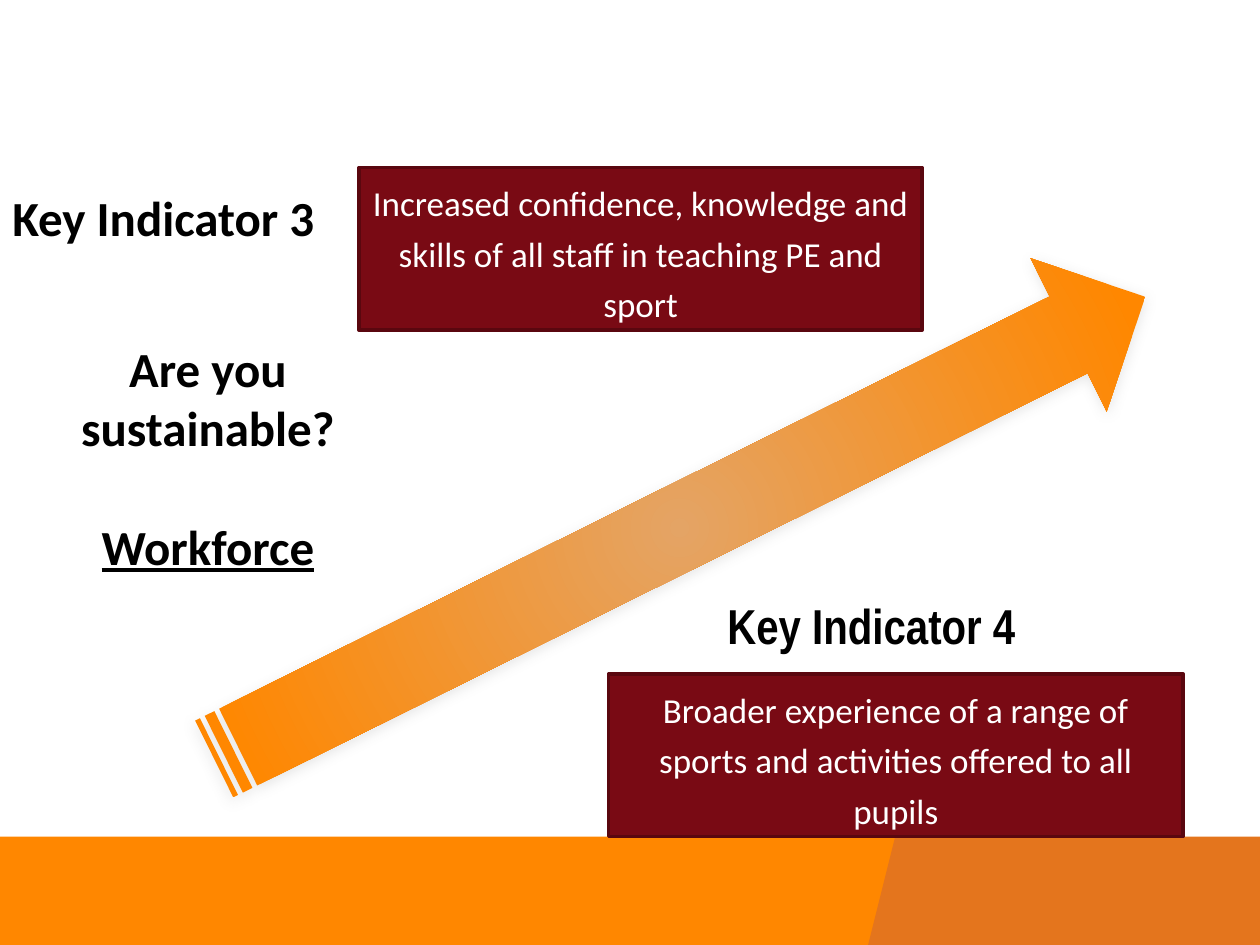
from lxml import etree
from pptx import Presentation
from pptx.dml.color import RGBColor
from pptx.enum.shapes import MSO_SHAPE as Shape
from pptx.enum.text import MSO_ANCHOR as Anchor, PP_ALIGN as Align
from pptx.oxml import parse_xml
from pptx.oxml.ns import nsdecls, qn
from pptx.util import Inches, Pt

ORANGE = RGBColor(0xFF, 0x87, 0x00)
RUST = RGBColor(0xE4, 0x75, 0x1D)
SAND = RGBColor(0xE4, 0xA4, 0x65)
MAROON = RGBColor(0x79, 0x0A, 0x14)
WINE = RGBColor(0x5A, 0x07, 0x0F)
GREY = RGBColor(0xC0, 0xC0, 0xC0)
WHITE = RGBColor(0xFF, 0xFF, 0xFF)
BLACK = RGBColor(0x00, 0x00, 0x00)


def add_run(para, text, size, color, font="Calibri", bold=False, under=None):
    run = para.add_run()
    run.text = text
    face = run.font
    face.name, face.size, face.bold = font, Pt(size), bold
    face.underline = under
    face.color.rgb = color


def add_block(slide, kind, box, fill):
    block = slide.shapes.add_shape(kind, *map(Inches, box))
    block.shadow.inherit = False
    block.fill.solid()
    block.fill.fore_color.rgb = fill
    block.line.fill.background()
    return block


def add_label(slide, box):
    label = slide.shapes.add_textbox(*map(Inches, box))
    label.text_frame.word_wrap = True
    return label.text_frame


def add_footer(slide, top, height):
    # Two slanted bands that bleed past the slide edges
    for left, width, fill in ((-0.25, 7.39, ORANGE), (6.88, 3.39, RUST)):
        add_block(slide, Shape.PARALLELOGRAM, (left, top, width, height), fill)


def add_card(slide, box, text):
    # Maroon panel with the indicator's wording
    card = add_block(slide, Shape.RECTANGLE, box, MAROON)
    card.line.color.rgb = WINE
    card.line.width = Pt(2)
    frame = card.text_frame
    frame.word_wrap = True
    frame.vertical_anchor = Anchor.MIDDLE
    para = frame.paragraphs[0]
    para.alignment = Align.CENTER
    para.line_spacing = 1.2
    add_run(para, text, 20, WHITE)


def add_heading(slide, box, text, font, align):
    para = add_label(slide, box).paragraphs[0]
    para.alignment = align
    add_run(para, text, 28, BLACK, font, bold=True)


def add_arrow(slide, box, angle):
    # Rising arrow, lit from its centre
    arrow = add_block(slide, Shape.STRIPED_RIGHT_ARROW, box, ORANGE)
    arrow.rotation = angle
    props = arrow.fill._xPr
    glow = parse_xml(
        f'<a:gradFill {nsdecls("a")} rotWithShape="1"><a:gsLst>'
        f'<a:gs pos="0"><a:srgbClr val="{SAND}"/></a:gs>'
        f'<a:gs pos="85000"><a:srgbClr val="{ORANGE}"/></a:gs></a:gsLst>'
        '<a:path path="circle"><a:fillToRect l="50000" t="50000" '
        'r="50000" b="50000"/></a:path></a:gradFill>')
    props.replace(props.find(qn("a:solidFill")), glow)
    # Soft shadow
    cast = etree.SubElement(
        props.find(qn("a:effectLst")), qn("a:outerShdw"),
        blurRad=str(Pt(7)), dist=str(Pt(2)), dir="5400000", rotWithShape="0")
    tone = etree.SubElement(cast, qn("a:srgbClr"), val=str(GREY))
    etree.SubElement(tone, qn("a:alpha"), val="40000")


def add_question(slide, box):
    frame = add_label(slide, box)
    ask, topic = frame.paragraphs[0], frame.add_paragraph()
    ask.alignment = topic.alignment = Align.CENTER
    topic.space_before = Pt(34)
    add_run(ask, "Are you sustainable?", 28, BLACK, bold=True)
    add_run(topic, "Workforce", 28, BLACK, bold=True, under=True)


def main():
    deck = Presentation()
    deck.slide_width, deck.slide_height = Inches(10), Inches(7.5)
    slide = deck.slides.add_slide(deck.slide_layouts[6])

    add_footer(slide, 6.64, 0.9)
    # Indicator 3
    add_card(slide, (2.85, 1.33, 4.47, 1.29),
             "Increased confidence, knowledge and skills of all staff "
             "in teaching PE and sport")
    add_heading(slide, (0, 1.44, 2.85, 0.57), "Key Indicator 3",
                "Calibri", Align.LEFT)
    # Indicator 4
    add_card(slide, (4.83, 5.35, 4.56, 1.29),
             "Broader experience of a range of sports and activities "
             "offered to all pupils")
    add_heading(slide, (4.83, 4.68, 4.17, 0.57), "Key Indicator 4",
                "Arial Narrow", Align.CENTER)
    add_arrow(slide, (1.27, 3.51, 8.25, 1.36), 333.6)
    add_question(slide, (0, 2.64, 3.3, 1.99))

    deck.save("out.pptx")


if __name__ == "__main__":
    main()
